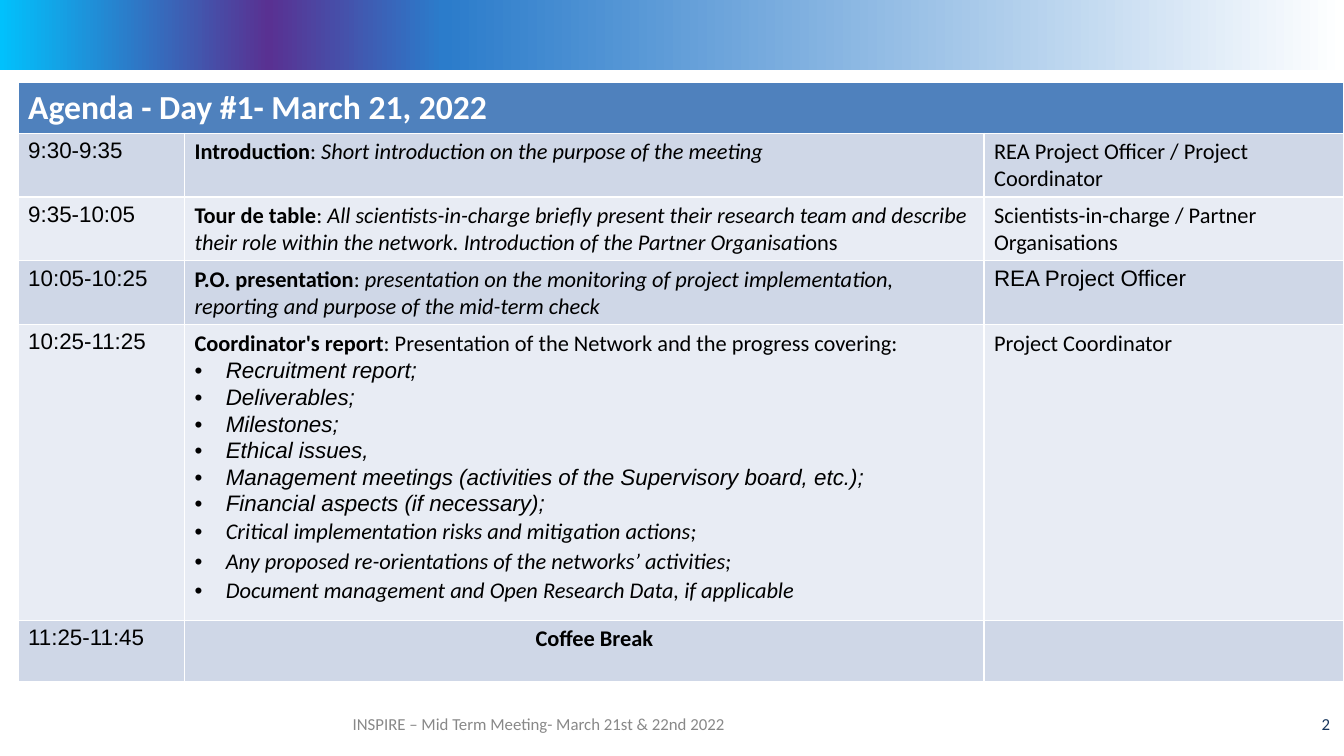
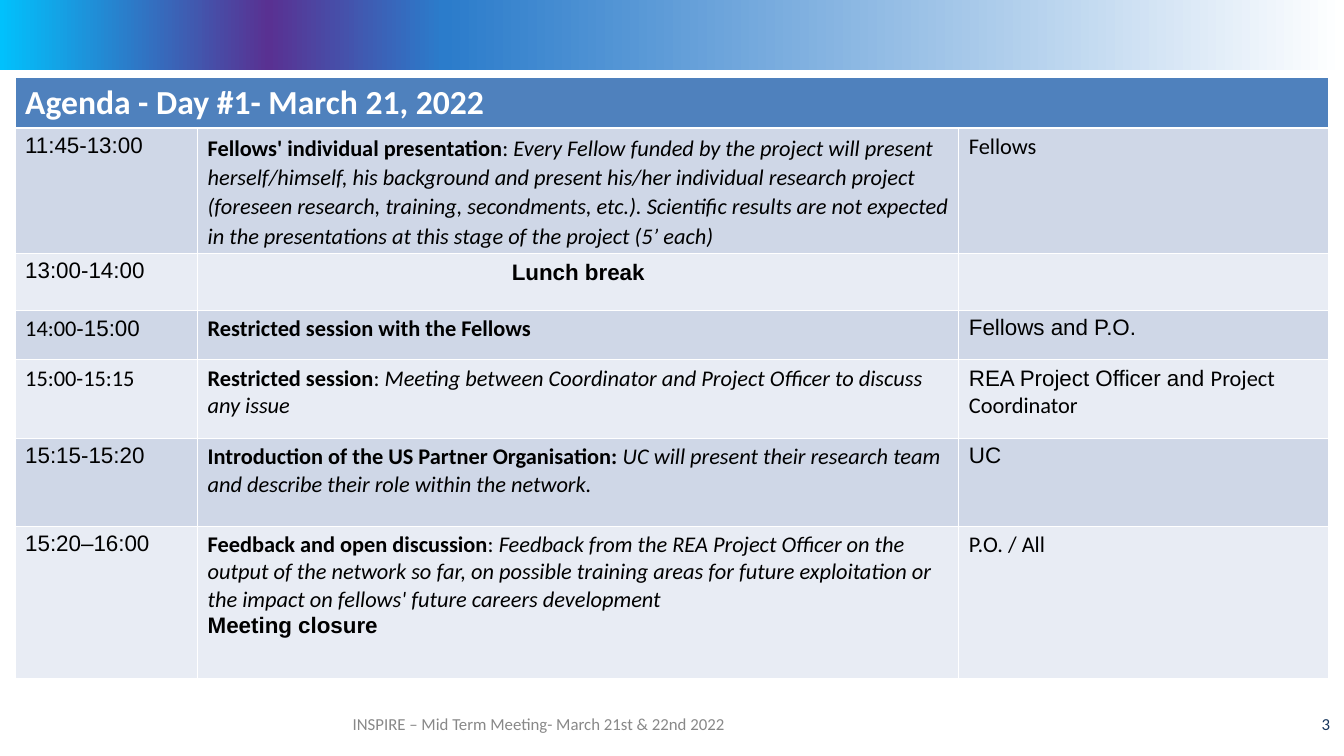
"""Builds the two agenda slides of a mid-term meeting."""
from dataclasses import dataclass

from lxml import etree
from pptx import Presentation
from pptx.dml.color import RGBColor
from pptx.enum.shapes import MSO_SHAPE
from pptx.enum.text import MSO_ANCHOR, PP_ALIGN
from pptx.oxml.ns import qn
from pptx.util import Inches, Pt

RECTANGLE = MSO_SHAPE.RECTANGLE
LEFT, CENTER, RIGHT = PP_ALIGN.LEFT, PP_ALIGN.CENTER, PP_ALIGN.RIGHT
MIDDLE = MSO_ANCHOR.MIDDLE


@dataclass(frozen=True)
class Theme:
    heading_font: str = "Calibri"
    plain_font: str = "Arial"
    heading_size: int = 24
    body_size: int = 16
    footer_size: int = 12
    header: str = "4F81BD"
    header_text: str = "FFFFFF"
    rows: tuple = ("CFD7E7", "E8ECF4")
    text: str = "000000"
    footer: str = "888888"
    number: str = "17365D"
    band: tuple = ((0, "01C1FC"), (20, "593192"), (33, "2B7CCB"), (100, "FFFFFF"))


THEME = Theme()


@dataclass(frozen=True)
class Piece:
    text: str
    font: str = THEME.heading_font
    bold: bool = False
    italic: bool = False


@dataclass(frozen=True)
class Line:
    pieces: tuple
    align: PP_ALIGN = LEFT
    spacing: float = 1.0
    indent: float = 0
    bullet: bool = False


def plain(text):
    return Piece(text)


def arial(text, **style):
    return Piece(text, THEME.plain_font, **style)


def bold(text):
    return Piece(text, bold=True)


def italic(text):
    return Piece(text, italic=True)


def cell_of(*pieces, **layout):
    return [Line(pieces, **layout)]


def topic(name, description, **layout):
    return cell_of(bold(name), plain(": "), italic(description), **layout)


def bullets(make_piece, *texts):
    return [Line((make_piece(text),), spacing=1.07, indent=0.31, bullet=True)
            for text in texts]


def arial_italic(text):
    return arial(text, italic=True)


HEADING = "Agenda - Day #1- March 21, 2022"
FOOTER = "INSPIRE – Mid Term Meeting- March 21st & 22nd 2022"

MORNING = [
    (cell_of(arial("9:30-9:35")),
     topic("Introduction", "Short introduction on the purpose of the meeting"),
     cell_of(plain("REA Project Officer / Project Coordinator"))),
    (cell_of(arial("9:35-10:05")),
     cell_of(bold("Tour de table"), plain(": "),
             italic("All scientists-in-charge briefly present their research team and "
                    "describe their role within the network. Introduction of the "
                    "Partner Organisati"),
             plain("ons")),
     cell_of(plain("Scientists-in-charge / Partner Organisations"))),
    (cell_of(arial("10:05-10:25")),
     topic("P.O. presentation",
           "presentation on the monitoring of project implementation, reporting and "
           "purpose of the mid-term check"),
     cell_of(arial("REA Project Officer"))),
    (cell_of(arial("10:25-11:25")),
     cell_of(bold("Coordinator's report"),
             plain(": Presentation of the Network and the progress covering:"))
     + bullets(arial_italic, "Recruitment report;", "Deliverables;", "Milestones;",
               "Ethical issues,",
               "Management meetings (activities of the Supervisory board, etc.);",
               "Financial aspects (if necessary);")
     + bullets(italic, "Critical implementation risks and mitigation actions;",
               "Any proposed re-orientations of the networks’ activities;",
               "Document management and Open Research Data, if applicable"),
     cell_of(plain("Project Coordinator"))),
    (cell_of(arial("11:25-11:45")),
     cell_of(bold("Coffee Break"), align=CENTER, indent=0.2),
     []),
]

AFTERNOON = [
    (cell_of(arial("11:45-13:00")),
     topic("Fellows' individual presentation",
           "Every Fellow funded by the project will present herself/himself, his "
           "background and present his/her individual research project (foreseen "
           "research, training, secondments, etc.). Scientific results are not expected "
           "in the presentations at this stage of the project (5’ each)", spacing=1.07),
     cell_of(plain("Fellows"))),
    (cell_of(arial("13:00-14:00")),
     cell_of(arial("Lunch break", bold=True), align=CENTER, spacing=1.07),
     []),
    (cell_of(plain("14:00"), arial("-15:00")),
     cell_of(bold("Restricted session with the Fellows")),
     cell_of(arial("Fellows and P.O."))),
    (cell_of(plain("15:00-15:15")),
     topic("Restricted session",
           "Meeting between Coordinator and Project Officer to discuss any issue"),
     cell_of(arial("REA Project Officer and "), plain("Project Coordinator"))),
    (cell_of(arial("15:15-15:20")),
     cell_of(bold("Introduction of the US Partner Organisation: "),
             italic("UC will present their research team and describe their role within "
                    "the network.")),
     cell_of(arial("UC"))),
    (cell_of(arial("15:20–16:00")),
     topic("Feedback and open discussion",
           "Feedback from the REA Project Officer on the output of the network so far, on "
           "possible training areas for future exploitation or the impact on fellows' "
           "future careers development")
     + cell_of(arial("Meeting closure", bold=True)),
     cell_of(plain("P.O. / All"))),
]


def style_run(run, size, color, piece):
    """Give a run its font, size, colour and emphasis."""
    font = run.font
    font.name, font.size = piece.font, Pt(size)
    font.bold, font.italic = piece.bold, piece.italic
    font.color.rgb = RGBColor.from_string(color)


def add_band(slide, width):
    """Draw the gradient band across the top."""
    band = slide.shapes.add_shape(RECTANGLE, 0, 0, width, Inches(0.69))
    band.shadow.inherit = False
    band.line.fill.background()
    band.fill.gradient()
    band.fill.gradient_angle = 0
    stops = band.element.spPr.find(".//" + qn("a:gsLst"))
    stops.clear()
    for percent, color in THEME.band:
        stop = etree.SubElement(stops, qn("a:gs"), pos=str(percent * 1000))
        etree.SubElement(stop, qn("a:srgbClr"), val=color)


def add_footer_text(slide, text, left, width, align, color):
    """Place one text on the footer line."""
    box = slide.shapes.add_textbox(Inches(left), Inches(6.98), Inches(width), Inches(0.4))
    frame = box.text_frame
    frame.word_wrap = True
    frame.vertical_anchor = MIDDLE
    frame.text = text
    paragraph = frame.paragraphs[0]
    paragraph.alignment = align
    style_run(paragraph.runs[0], THEME.footer_size, color, plain(text))


def set_indent(paragraph, line):
    """Indent a paragraph and hang its bullet when it has one."""
    properties = paragraph._p.get_or_add_pPr()
    properties.set("marL", str(Inches(line.indent)))
    if line.bullet:
        properties.set("indent", str(-Inches(line.indent)))
        bullet_color = etree.SubElement(properties, qn("a:buClr"))
        etree.SubElement(bullet_color, qn("a:srgbClr"), val=THEME.text)
        etree.SubElement(properties, qn("a:buFont"), typeface=THEME.plain_font)
        etree.SubElement(properties, qn("a:buChar"), char="•")


def fill_cell(cell, lines, fill, size=THEME.body_size, color=THEME.text):
    """Colour a cell and write its lines."""
    cell.fill.solid()
    cell.fill.fore_color.rgb = RGBColor.from_string(fill)
    frame = cell.text_frame
    for index, line in enumerate(lines):
        paragraph = frame.add_paragraph() if index else frame.paragraphs[0]
        if line.indent:
            set_indent(paragraph, line)
        paragraph.alignment = line.align
        paragraph.line_spacing = line.spacing
        for piece in line.pieces:
            run = paragraph.add_run()
            run.text = piece.text
            style_run(run, size, color, piece)


def add_agenda(slide, left, top, widths, heights, sessions):
    """Build the agenda table under its merged heading row."""
    table = slide.shapes.add_table(
        len(heights), len(widths), Inches(left), Inches(top),
        Inches(sum(widths)), Inches(sum(heights))).table
    for column, width in zip(table.columns, widths):
        column.width = Inches(width)
    for row, height in zip(table.rows, heights):
        row.height = Inches(height)
    heading = table.cell(0, 0)
    heading.merge(table.cell(0, len(widths) - 1))
    fill_cell(heading, cell_of(bold(HEADING)), THEME.header,
              THEME.heading_size, THEME.header_text)
    for row_index, session in enumerate(sessions):
        fill = THEME.rows[row_index % len(THEME.rows)]
        for column_index, lines in enumerate(session):
            fill_cell(table.cell(row_index + 1, column_index), lines, fill)


def add_agenda_slide(deck, number, *agenda):
    """Add a slide with band, footer and agenda."""
    slide = deck.slides.add_slide(deck.slide_layouts.get_by_name("Blank"))
    add_band(slide, deck.slide_width)
    add_footer_text(slide, FOOTER, 2.81, 5.07, CENTER, THEME.footer)
    add_footer_text(slide, str(number), 12.81, 0.48, RIGHT, THEME.number)
    add_agenda(slide, *agenda)


def main():
    """Build and save the presentation."""
    deck = Presentation()
    deck.slide_width, deck.slide_height = Inches(13.33), Inches(7.5)
    add_agenda_slide(deck, 2, 0.18, 0.82, (1.65, 7.93, 3.57),
                     (0.48, 0.61, 0.61, 0.61, 2.79, 0.61), MORNING)
    add_agenda_slide(deck, 3, 0.15, 0.77, (1.81, 7.55, 3.67),
                     (0.49, 1.2, 0.57, 0.49, 0.78, 0.87, 1.51), AFTERNOON)
    deck.save("out.pptx")


if __name__ == "__main__":
    main()
